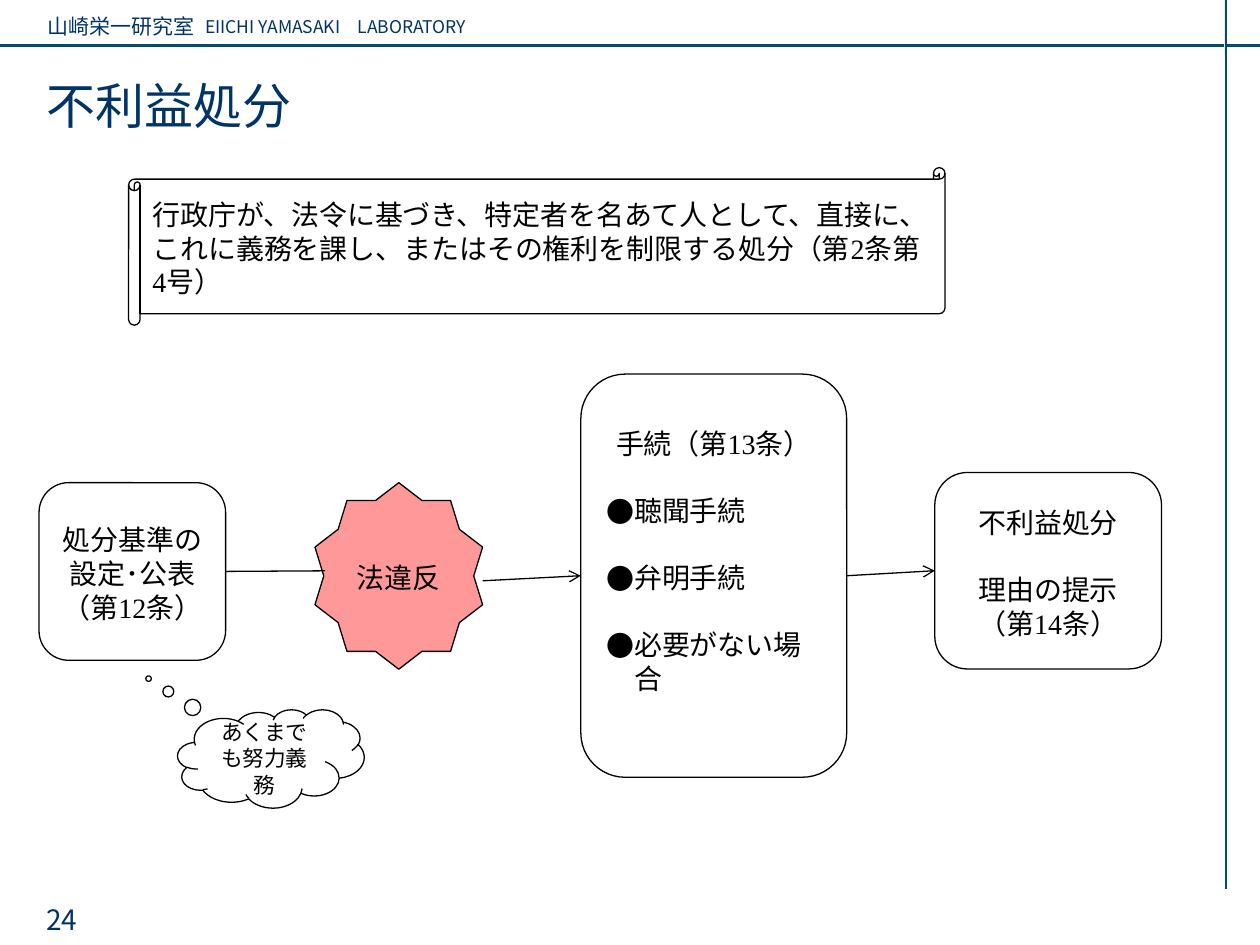
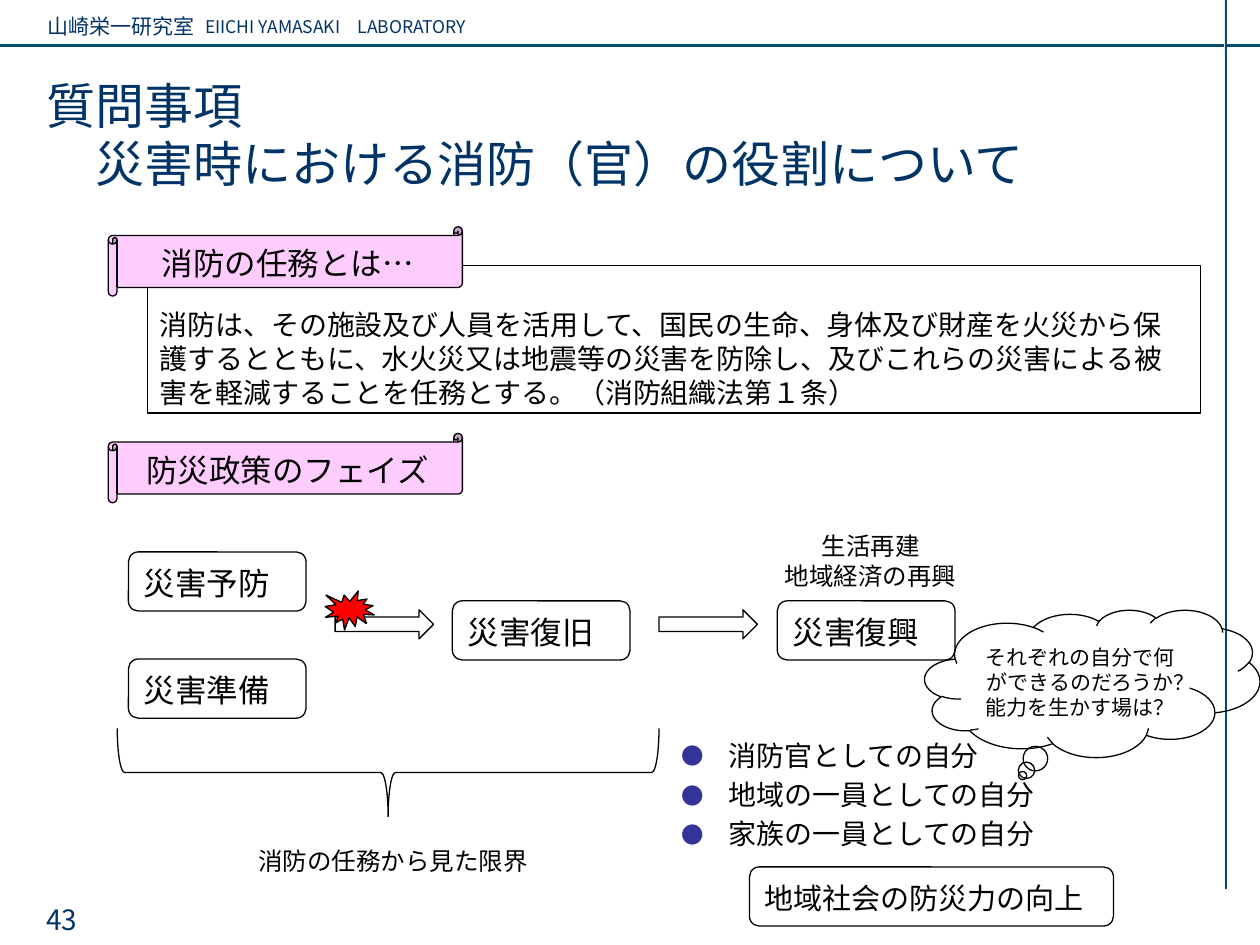
import pptx
import pptx.dml.color
import pptx.enum.shapes
import pptx.enum.text
import pptx.oxml
import pptx.oxml.ns
import pptx.util
from lxml import etree

Pt = pptx.util.Pt
qn = pptx.oxml.ns.qn
SHAPES = pptx.enum.shapes.MSO_SHAPE
ALIGN = pptx.enum.text.PP_ALIGN
ANCHOR = pptx.enum.text.MSO_ANCHOR

COLORS = {
    "ink": "000000", "navy": "003366", "rule": "024D6E", "pale": "EEEEEE",
    "pink": "FFCCFF", "red": "FF0000", "bullet": "333399",
}
SANS = "Noto Sans CJK JP"
SERIF = "Times New Roman"
LINE_HEIGHT = 1.2
INSET = 5.6  # top inset that centres the Japanese glyphs optically


def rgb(name):
    return pptx.dml.color.RGBColor.from_string(COLORS[name])


def within(box, left, top, width, height):
    """Turn a position relative to a region into one on the slide."""
    return box[0] + left, box[1] + top, width, height


# ---- text ----
def add_bullet(paragraph, indent, color="ink", percent=100):
    properties = paragraph._p.get_or_add_pPr()
    properties.set("marL", str(Pt(indent)))
    properties.set("indent", str(-Pt(indent)))
    bullet_color = etree.SubElement(properties, qn("a:buClr"))
    etree.SubElement(bullet_color, qn("a:srgbClr"), val=COLORS[color])
    etree.SubElement(properties, qn("a:buSzPct"), val=str(percent * 1000))
    etree.SubElement(properties, qn("a:buFont"), typeface=SANS)
    etree.SubElement(properties, qn("a:buChar"), char="●")


def style_paragraph(paragraph, size, font=SERIF, color="ink", align=ALIGN.LEFT, gap=0):
    paragraph.alignment = align
    paragraph.line_spacing = Pt(round(size * LINE_HEIGHT, 1))
    paragraph.space_before = Pt(gap)
    paragraph.font.size = Pt(size)
    paragraph.font.name = font
    paragraph.font.color.rgb = rgb(color)
    defaults = paragraph._p.pPr.find(qn("a:defRPr"))
    etree.SubElement(defaults, qn("a:ea"), typeface=SANS)


def write(shape, lines, size, anchor=ANCHOR.MIDDLE, top=INSET, bottom=3.6,
          gaps=None, bullets=None, **style):
    """Fill a shape; gaps and bullets are keyed by line number."""
    frame = shape.text_frame
    frame.word_wrap = True
    frame.auto_size = pptx.enum.text.MSO_AUTO_SIZE.NONE
    frame.vertical_anchor = anchor
    frame.margin_left = frame.margin_right = Pt(7.2)
    frame.margin_top, frame.margin_bottom = Pt(top), Pt(bottom)
    for number, line in enumerate(lines):
        paragraph = frame.paragraphs[0] if number == 0 else frame.add_paragraph()
        paragraph.text = line
        if bullets and number in bullets:
            add_bullet(paragraph, *bullets[number])
        style_paragraph(paragraph, size, gap=(gaps or {}).get(number, 0), **style)


# ---- drawing ----
def add_text(slide, box, lines, size, **options):
    shape = slide.shapes.add_textbox(*map(Pt, box))
    write(shape, lines, size, anchor=ANCHOR.TOP, **options)


def add_outline(slide, kind, box, fill=None):
    shape = slide.shapes.add_shape(kind, *map(Pt, box))
    shape.shadow.inherit = False
    shape.line.color.rgb = rgb("ink")
    shape.line.width = Pt(0.75)
    if fill:
        shape.fill.solid()
        shape.fill.fore_color.rgb = rgb(fill)
    else:
        shape.fill.background()
    return shape


def add_line(slide, start, end, color="ink", width=0.75, arrow=False):
    line = slide.shapes.add_connector(
        pptx.enum.shapes.MSO_CONNECTOR.STRAIGHT, *map(Pt, (*start, *end)))
    line.line.color.rgb = rgb(color)
    line.line.width = Pt(width)
    if arrow:
        etree.SubElement(line.line._get_or_add_ln(), qn("a:tailEnd"), type="arrow")
    etree.SubElement(line._element.spPr, qn("a:effectLst"))
    return line


# ---- shared frame of every slide ----
def add_slide(presentation, title, number):
    slide = presentation.slides.add_slide(presentation.slide_layouts[5])
    add_text(slide, (20.2, 2.2, 221, 21.6), ["山崎栄一研究室"], 12, color="navy")
    add_text(slide, (110.2, 3.6, 408, 19.4), ["EIICHI YAMASAKI\u3000LABORATORY".replace("\u3000", "　")],
             10, color="navy", font=SANS)
    add_line(slide, (0, 26), (720, 26), "rule", 1.5)
    add_line(slide, (700, 31.7), (700, 0), "pale")
    add_line(slide, (700.6, 0), (700.6, 508.3), "rule")
    add_text(slide, (19.4, 510, 150, 30), [number], 16, color="navy", font=SANS)

    heading = slide.shapes.title
    heading.left, heading.top, heading.width, heading.height = map(Pt, (19.4, 36, 663, 74.5))
    write(heading, [title], 28, anchor=ANCHOR.TOP, top=7, color="navy", font=SANS)
    return slide


# ---- slide: adverse disposition ----
def add_definition(slide, box):
    scroll = add_outline(slide, SHAPES.HORIZONTAL_SCROLL, box)
    scroll.adjustments[0] = 0.073
    write(scroll, ["行政庁が、法令に基づき、特定者を名あて人として、直接に、これに義務を課し、"
                   "またはその権利を制限する処分（第2条第4号）"], 16)


def add_disposition_flow(slide, box):
    blank = 19.2  # one empty line of 16 pt text

    criteria = add_outline(slide, SHAPES.FLOWCHART_ALTERNATE_PROCESS,
                           within(box, 0, 62, 106.6, 101.5))
    write(criteria, ["処分基準の設定･公表（第12条）"], 16, align=ALIGN.CENTER)

    procedure = add_outline(slide, SHAPES.ROUNDED_RECTANGLE,
                            within(box, 309.6, 0, 151.9, 230.4))
    write(procedure, ["手続（第13条）", "聴聞手続", "弁明手続", "必要がない場合"], 16,
          bottom=3.6 + blank, gaps=dict.fromkeys((1, 2, 3), blank),
          bullets=dict.fromkeys((1, 2, 3), (16,)))
    procedure.text_frame.paragraphs[0].alignment = ALIGN.CENTER

    result = add_outline(slide, SHAPES.ROUNDED_RECTANGLE,
                         within(box, 511.9, 56.2, 129.6, 112.3))
    write(result, ["不利益処分", "理由の提示", "（第14条）"], 16,
          gaps={1: blank}, align=ALIGN.CENTER)

    violation = add_outline(slide, SHAPES.STAR_10_POINT,
                            within(box, 157.7, 62, 95.8, 106.6), "red")
    color = violation.fill._xPr.find(qn("a:solidFill"))[0]
    etree.SubElement(color, qn("a:alpha"), val="40000")
    write(violation, ["法違反"], 16, align=ALIGN.CENTER)

    # Links between the steps
    left, top = box[:2]
    middle = top + 112.4
    to_violation = add_line(slide, (left + 106.6, middle), (left + 163.5, middle))
    to_violation.begin_connect(criteria, 3)
    to_procedure = add_line(slide, (left + 253.5, top + 118.1),
                            (left + 309.6, top + 115.2), arrow=True)
    to_procedure.end_connect(procedure, 1)
    to_result = add_line(slide, (left + 461.5, top + 115.2), (left + 511.9, middle), arrow=True)
    to_result.begin_connect(procedure, 3)
    to_result.end_connect(result, 1)

    remark = add_outline(slide, SHAPES.CLOUD_CALLOUT, within(box, 79.2, 191.6, 106.6, 56.2))
    remark.adjustments[0], remark.adjustments[1] = -0.656, -0.814
    write(remark, ["あくまでも努力義務"], 12.4, align=ALIGN.CENTER)


# ---- slide: role of the fire service ----
def add_banner(slide, box, text):
    banner = add_outline(slide, SHAPES.HORIZONTAL_SCROLL, within(box, 0, 0, 202.3, 39.6), "pink")
    write(banner, [text], 18, align=ALIGN.CENTER)


def add_phase(slide, box, text, size=18):
    write(add_outline(slide, SHAPES.ROUNDED_RECTANGLE, box), [text], size)


def add_duty(slide, box):
    statute = add_outline(slide, SHAPES.RECTANGLE, within(box, 22.3, 22.3, 601.9, 84.2))
    write(statute, ["消防は、その施設及び人員を活用して、国民の生命、身体及び財産を火災から保護するとともに、"
                    "水火災又は地震等の災害を防除し、及びこれらの災害による被害を軽減することを任務とする。"
                    "（消防組織法第１条）"], 16, top=25)
    add_banner(slide, box, "消防の任務とは…")


def add_phases(slide, box):
    add_banner(slide, box, "防災政策のフェイズ")
    for text, left, top in (("災害予防", 11.5, 67.7), ("災害準備", 11.5, 128.9),
                            ("災害復旧", 196.6, 95.7), ("災害復興", 382.3, 95.7)):
        add_phase(slide, within(box, left, top, 101.5, 33.8), text)
    for left in (129.6, 314.7):
        add_outline(slide, SHAPES.RIGHT_ARROW, within(box, left, 100.8, 56.2, 16.6))
    add_outline(slide, SHAPES.EXPLOSION1, within(box, 123.9, 90, 28.1, 22.3), "red")
    add_text(slide, within(box, 376.6, 50.4, 118, 41), ["生活再建", "地域経済の再興"], 14,
             align=ALIGN.CENTER)

    # Limit of the fire service's duty
    brace = add_outline(slide, SHAPES.LEFT_BRACE, within(box, 134.7, 38.9, 50.4, 309.6))
    brace.rotation = 270
    add_text(slide, within(box, 78.5, 230.4, 185, 24.5), ["消防の任務から見た限界"], 14)


def add_roles(slide, box):
    add_text(slide, within(box, 0, 67.7, 233.3, 84.2),
             ["消防官としての自分", "地域の一員としての自分", "家族の一員としての自分"], 16,
             gaps={1: 3.3, 2: 3.3}, bullets=dict.fromkeys(range(3), (27, "bullet", 80)))
    question = add_outline(slide, SHAPES.CLOUD_CALLOUT, within(box, 146.2, 0, 191.5, 84.2))
    write(question, ["それぞれの自分で何ができるのだろうか？", "能力を生かす場は？"], 12,
          align=ALIGN.CENTER)
    add_phase(slide, within(box, 46, 146.9, 208, 33.8), "地域社会の防災力の向上", 16.6)


def main():
    presentation = pptx.Presentation()
    presentation.slide_width, presentation.slide_height = Pt(720), Pt(540)

    disposition = add_slide(presentation, "不利益処分", "24")
    add_definition(disposition, (73.5, 95.8, 466.5, 90))
    add_disposition_flow(disposition, (22.3, 213.8, 641.5, 247.8))

    roles = add_slide(presentation, "質問事項\v　災害時における消防（官）の役割について", "43")
    add_duty(roles, (61.9, 129.6, 624.2, 106.5))
    add_phases(roles, (61.9, 247.7, 495, 255))
    add_roles(roles, (382.3, 348.5, 337.7, 180.7))

    presentation.save("out.pptx")


if __name__ == "__main__":
    main()
